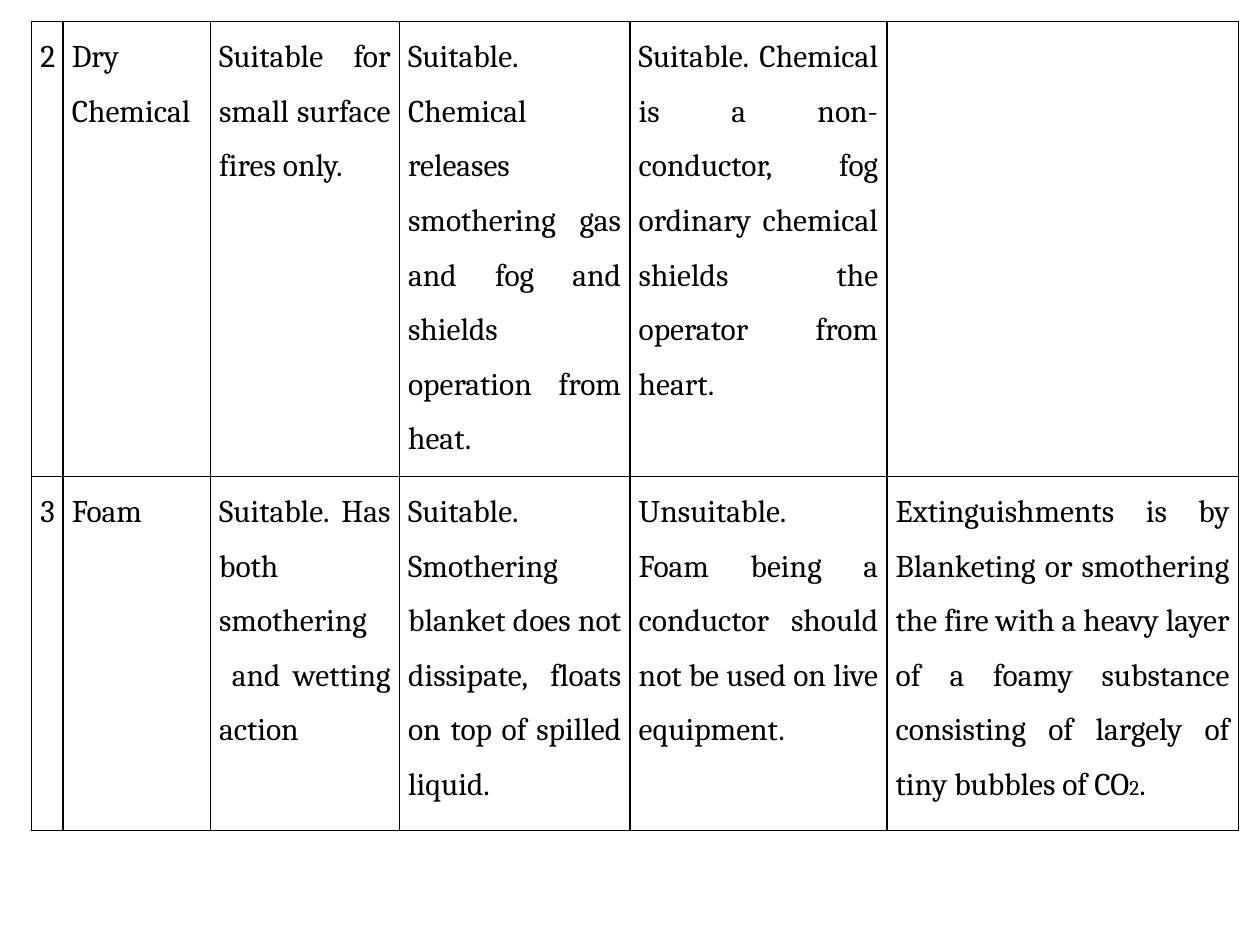
import pptx
import pptx.util
import pptx.dml.color
import pptx.enum.text
import pptx.oxml
import pptx.oxml.ns

Inches = pptx.util.Inches
Pt = pptx.util.Pt
COLORS = {"ink": "000000", "paper": "FFFFFF"}
SIZES = {"body": 18, "subscript": 12}
SUBSCRIPT_MARK = "|"

column_widths = [0.25, 1.17, 1.5, 1.83, 2.04, 2.79]
row_heights = [3.61, 2.81]
extinguishers = [
    [
        ["2"],
        ["Dry Chemical"],
        ["Suitable for small surface fires only."],
        ["Suitable. Chemical releases smothering gas and fog and shields operation from heat."],
        ["Suitable. Chemical is a non-conductor, fog ordinary chemical shields the operator from heart."],
        [],
    ],
    [
        ["3"],
        ["Foam"],
        ["Suitable. Has both smothering", " and wetting action"],
        ["Suitable. Smothering blanket does not dissipate, floats on top of spilled liquid."],
        ["Unsuitable.", "Foam being a conductor should not be used on live equipment."],
        ["Extinguishments is by Blanketing or smothering the fire with a heavy layer of a foamy "
         "substance consisting of largely of tiny bubbles of CO|2|."],
    ],
]
cell_format = {
    "margin_left": Inches(0.07),
    "margin_right": Inches(0.07),
    "margin_top": 0,
    "margin_bottom": 0,
}
paragraph_format = {
    "alignment": pptx.enum.text.PP_ALIGN.JUSTIFY,
    "line_spacing": 1.5,
}


def apply_format(target, values):
    for name, value in values.items():
        setattr(target, name, value)


def add_borders(cell):
    properties = cell._tc.get_or_add_tcPr()
    for side in ("lnL", "lnR", "lnT", "lnB"):
        properties.append(pptx.oxml.parse_xml(
            f'<a:{side} {pptx.oxml.ns.nsdecls("a")} w="{Pt(1)}"><a:solidFill>'
            f'<a:srgbClr val="{COLORS["ink"]}"/></a:solidFill></a:{side}>'
        ))


deck = pptx.Presentation()
deck.slide_width = Inches(10)
deck.slide_height = Inches(7.5)
page = deck.slides.add_slide(deck.slide_layouts[6])

table = page.shapes.add_table(
    len(row_heights), len(column_widths), Inches(0.25), Inches(0.17),
    Inches(sum(column_widths)), Inches(sum(row_heights)),
).table
apply_format(table, {"first_row": False, "horz_banding": False})
for column, width in zip(table.columns, column_widths):
    column.width = Inches(width)
for row, height in zip(table.rows, row_heights):
    row.height = Inches(height)

for row, contents in zip(table.rows, extinguishers):
    for cell, paragraphs in zip(row.cells, contents):
        add_borders(cell)
        apply_format(cell, cell_format)
        cell.fill.solid()
        cell.fill.fore_color.rgb = pptx.dml.color.RGBColor.from_string(COLORS["paper"])
        for number, text in enumerate(paragraphs):
            para = cell.text_frame.add_paragraph() if number else cell.text_frame.paragraphs[0]
            apply_format(para, paragraph_format)
            for position, part in enumerate(text.split(SUBSCRIPT_MARK)):
                span = para.add_run()
                span.text = part
                size = SIZES["subscript" if position % 2 else "body"]
                apply_format(span.font, {"name": "Cambria", "size": Pt(size)})
                span.font.color.rgb = pptx.dml.color.RGBColor.from_string(COLORS["ink"])

deck.save("out.pptx")
